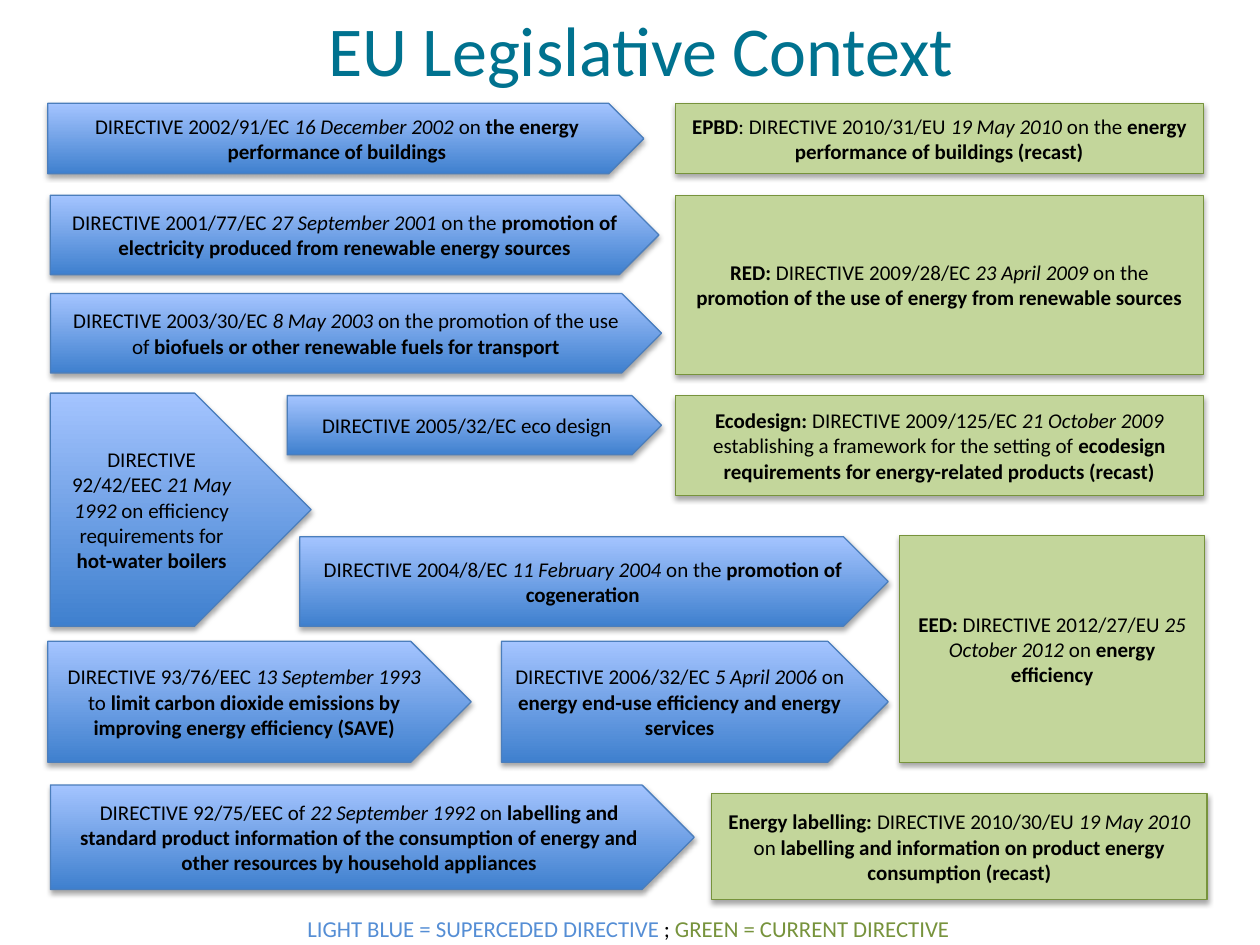
from lxml.etree import SubElement
from pptx import Presentation
from pptx.dml.color import RGBColor
from pptx.enum.shapes import MSO_SHAPE
from pptx.enum.text import MSO_ANCHOR, PP_ALIGN
from pptx.oxml.ns import qn
from pptx.util import Inches, Pt

COLOURS = {
    "title": "00728F",
    "text": "000000",
    "blue_dark": "3F80CE",
    "blue_light": "A4C4FF",
    "blue_line": "4B7EBC",
    "blue_key": "558ED5",
    "green": "C3D69B",
    "green_line": "77933C",
    "shadow": "000000",
}

deck = Presentation()
deck.slide_width, deck.slide_height = Inches(10), Inches(7.5)
slide = deck.slides.add_slide(deck.slide_layouts[5])
column = row = deck.slide_width / 100


def grid(*cells):
    return [round(cell * unit) for cell, unit in zip(cells, (column, row) * 2)]


def write(frame, runs, size, anchor):
    frame.word_wrap = True
    frame.vertical_anchor = anchor
    paragraph = frame.paragraphs[0]
    paragraph.alignment = PP_ALIGN.CENTER
    for words, style, colour in runs:
        run = paragraph.add_run()
        run.text = words
        run.font.name = "Calibri"
        run.font.size = Pt(size)
        run.font.bold = style == "b"
        run.font.italic = style == "i"
        run.font.color.rgb = RGBColor.from_string(COLOURS[colour])


heading = slide.shapes.title
heading.left, heading.top, heading.width, heading.height = grid(22.1, 0, 57.5, 7.7)
write(heading.text_frame, [("EU Legislative Context", "", "title")], 40, MSO_ANCHOR.TOP)

EDGE, INDENT, CURRENT, CURRENT_WIDTH = 3.8, 4, 53.6, 41.9

directives = [
    ("old", (EDGE, 8.2, 47.3, 5.6), [
        ("DIRECTIVE 2002/91/EC ", ""), ("16 December 2002 ", "i"), ("on ", ""),
        ("the energy performance of buildings", "b")]),
    ("current", (CURRENT, 8.2, CURRENT_WIDTH, 5.6), [
        ("EPBD", "b"), (": DIRECTIVE 2010/31/EU ", ""), ("19 May 2010 ", "i"),
        ("on the ", ""), ("energy performance of buildings (recast)", "b")]),
    ("old", (INDENT, 15.5, 48.3, 6.3), [
        ("DIRECTIVE 2001/77/EC ", ""), ("27 September 2001 ", "i"), ("on the ", ""),
        ("promotion of electricity produced from renewable energy sources", "b")]),
    ("current", (CURRENT, 15.5, CURRENT_WIDTH, 14.2), [
        ("RED: ", "b"), ("DIRECTIVE 2009/28/EC ", ""), ("23 April 2009", "i"),
        (" on the ", ""),
        ("promotion of the use of energy from renewable sources", "b")]),
    ("old", (INDENT, 23.3, 48.5, 6.3), [
        ("DIRECTIVE 2003/30/EC ", ""), ("8 May 2003", "i"),
        (" on the promotion of the use of ", ""),
        ("biofuels or other renewable fuels for transport", "b")]),
    ("old", (INDENT, 31.2, 20.7, 18.5), [
        ("DIRECTIVE 92/42/EEC ", ""), ("21 May 1992", "i"),
        (" on efficiency requirements for ", ""), ("hot-water boilers", "b")]),
    ("old", (22.8, 31.4, 29.7, 4.7), [("DIRECTIVE 2005/32/EC eco design", "")]),
    ("old", (23.8, 42.6, 46.7, 7.1), [
        ("DIRECTIVE 2004/8/EC ", ""), ("11 February 2004", "i"), (" on the ", ""),
        ("promotion of cogeneration", "b")]),
    ("current", (CURRENT, 31.4, CURRENT_WIDTH, 7.9), [
        ("Ecodesign: ", "b"), ("DIRECTIVE 2009/125/EC ", ""),
        ("21 October 2009", "i"),
        (" establishing a framework for the setting of ", ""),
        ("ecodesign requirements for energy-related products (recast)", "b")]),
    ("current", (71.4, 42.5, 24.2, 18), [
        ("EED: ", "b"), ("DIRECTIVE 2012/27/EU ", ""), ("25 October 2012", "i"),
        (" on ", ""), ("energy efficiency", "b")]),
    ("old", (EDGE, 50.9, 33.6, 9.6), [
        ("DIRECTIVE 93/76/EEC ", ""), ("13 September 1993", "i"), (" to ", ""),
        ("limit carbon dioxide emissions by improving energy efficiency (SAVE)", "b")]),
    ("old", (39.8, 50.9, 30.7, 9.6), [
        ("DIRECTIVE 2006/32/EC ", ""), ("5 April 2006", "i"), (" on ", ""),
        ("energy end-use efficiency and energy services", "b")]),
    ("old", (INDENT, 62.3, 51.1, 8.3), [
        ("DIRECTIVE 92/75/EEC of ", ""), ("22 September 1992", "i"), (" on ", ""),
        ("labelling and standard product information of the consumption of energy "
         "and other resources by household appliances", "b")]),
    ("current", (56.5, 63, 39.3, 8.4), [
        ("Energy labelling: ", "b"), ("DIRECTIVE 2010/30/EU ", ""),
        ("19 May 2010", "i"), (" on ", ""),
        ("labelling and information on product energy consumption (recast)", "b")]),
]

for status, cells, runs in directives:
    superseded = status == "old"
    outline = MSO_SHAPE.PENTAGON if superseded else MSO_SHAPE.RECTANGLE
    directive = slide.shapes.add_shape(outline, *grid(*cells))
    if superseded:
        directive.fill.gradient()
        directive.fill.gradient_angle = 90
        for stop, shade in zip(directive.fill.gradient_stops, ("blue_dark", "blue_light")):
            stop.color.rgb = RGBColor.from_string(COLOURS[shade])
    else:
        directive.fill.solid()
        directive.fill.fore_color.rgb = RGBColor.from_string(COLOURS["green"])
    border = "blue_line" if superseded else "green_line"
    directive.line.color.rgb = RGBColor.from_string(COLOURS[border])
    directive.line.width = Pt(0.75)

    directive.shadow.inherit = False
    effects = directive._element.spPr.find(qn("a:effectLst"))
    shadow = SubElement(effects, qn("a:outerShdw"), blurRad=str(Pt(3.1)),
                        dist=str(Pt(1.8)), dir="5400000", rotWithShape="0")
    shadow_colour = SubElement(shadow, qn("a:srgbClr"), val=COLOURS["shadow"])
    SubElement(shadow_colour, qn("a:alpha"), val="35000")

    write(directive.text_frame, [(words, style, "text") for words, style in runs],
          12, MSO_ANCHOR.MIDDLE)

key = slide.shapes.add_textbox(*grid(4, 72.1, 91.7, 3.2))
write(key.text_frame, [
    ("LIGHT BLUE = SUPERCEDED DIRECTIVE ", "", "blue_key"),
    ("; ", "", "text"),
    ("GREEN = CURRENT DIRECTIVE", "", "green_line"),
], 13, MSO_ANCHOR.TOP)

deck.save("out.pptx")
